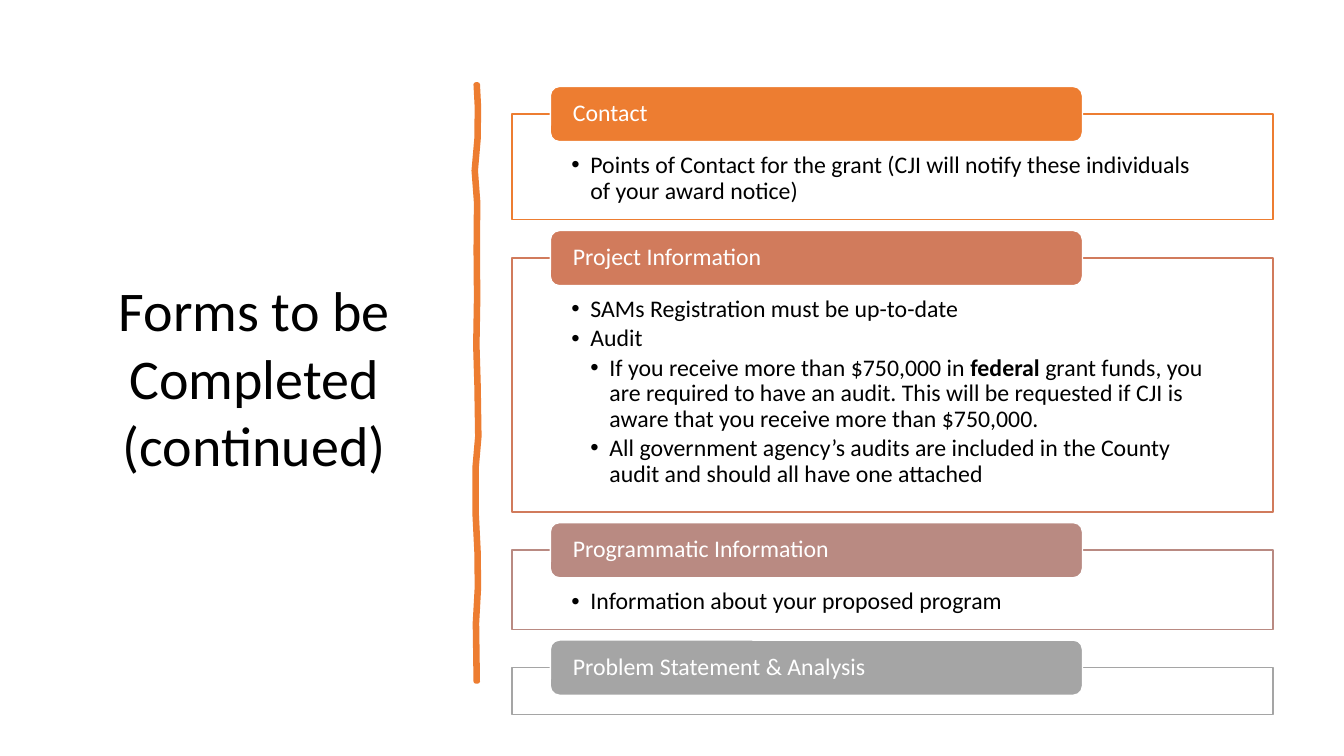
from dataclasses import dataclass

from lxml import etree
from pptx import Presentation
from pptx import util as u
from pptx.dml import color
from pptx.enum import shapes, text
from pptx.oxml import ns


@dataclass(frozen=True)
class Theme:
    font: str = "Calibri"
    title: float = 40
    body: float = 17
    after: float = 2.5
    ink: str = "000000"
    paper: str = "FFFFFF"
    brush: str = "ED7D31"
    tints: tuple = ("ED7D31", "D17B5C", "B98A82", "A5A5A5")


THEME = Theme()
LEFT, WIDTH, TOP, GAP = 12.9, 19.18, 2.87, 0.96
TAB_LEFT, TAB_WIDTH, TAB_HEIGHT, TAB_RISE = 13.87, 13.41, 1.39, 0.69
INDENT = 0.48

CARDS = [
    ("Contact", 2.67, [
        (1, [("Points of Contact for the grant (CJI will notify these "
              "individuals of your award notice)", False)]),
    ]),
    ("Project Information", 6.4, [
        (1, [("SAMs Registration must be up-to-date", False)]),
        (1, [("Audit", False)]),
        (2, [("If you receive more than $750,000 in ", False),
             ("federal", True),
             (" grant funds, you are required to have an audit. This will be "
              "requested if CJI is aware that you receive more than $750,000.",
              False)]),
        (2, [("All government agency’s audits are included in the County "
              "audit and should all have one attached", False)]),
    ]),
    ("Programmatic Information", 2.0, [
        (1, [("Information about your proposed program", False)]),
    ]),
    ("Problem Statement & Analysis", 1.19, []),
]

BRUSH_X = 12.04
BRUSH_THICK = 0.05
BRUSH_EDGE = [
    (2.13, 0), (2.7, 0.03), (3.5, 0.02), (4.3, -0.05), (5.1, 0.01),
    (6.3, 0), (7.5, 0.01), (8.7, -0.01), (9.7, 0.02), (11, 0.04),
    (11.8, -0.03), (12.9, -0.03), (13.9, 0.02), (14.8, 0.03),
    (15.7, -0.02), (17.17, 0),
]


def rgb(code):
    return color.RGBColor.from_string(code)


def paint(shape, fill, line, width):
    shape.shadow.inherit = False
    shape.fill.solid()
    shape.fill.fore_color.rgb = rgb(fill)
    shape.line.color.rgb = rgb(line)
    shape.line.width = u.Pt(width)


def box(slide, kind, area, fill, line):
    shape = slide.shapes.add_shape(kind, *map(u.Cm, area))
    paint(shape, fill, line, 1)
    return shape


def inset(frame, left, top, right, bottom):
    frame.word_wrap = True
    frame.margin_left, frame.margin_top = u.Cm(left), u.Cm(top)
    frame.margin_right, frame.margin_bottom = u.Cm(right), u.Cm(bottom)


def add_run(para, words, size, ink, bold=False):
    run = para.add_run()
    run.text = words
    run.font.name = THEME.font
    run.font.size = u.Pt(size)
    run.font.bold = bold
    run.font.color.rgb = rgb(ink)


def bullet(para, level):
    para.level = level
    props = para._p.get_or_add_pPr()
    props.set("marL", str(u.Cm(INDENT * level)))
    props.set("indent", str(-u.Cm(INDENT)))
    etree.SubElement(props, ns.qn("a:buFont")).set("typeface", "Arial")
    etree.SubElement(props, ns.qn("a:buChar")).set("char", "•")


def add_body(frame, items):
    frame.vertical_anchor = text.MSO_ANCHOR.TOP
    inset(frame, 1.5, 0.99, 1.5, 0.33)
    for i, (level, runs) in enumerate(items):
        para = frame.paragraphs[0] if i == 0 else frame.add_paragraph()
        para.alignment = text.PP_ALIGN.LEFT
        para.line_spacing = 0.9
        para.space_after = u.Pt(THEME.after)
        bullet(para, level)
        for words, bold in runs:
            add_run(para, words, THEME.body, THEME.ink, bold)


def add_tab(slide, label, top, tint):
    area = (TAB_LEFT, top - TAB_RISE, TAB_WIDTH, TAB_HEIGHT)
    tab = box(slide, shapes.MSO_SHAPE.ROUNDED_RECTANGLE, area, tint,
              THEME.paper)
    frame = tab.text_frame
    frame.vertical_anchor = text.MSO_ANCHOR.MIDDLE
    inset(frame, 0.5, 0, 0.5, 0)
    para = frame.paragraphs[0]
    para.alignment = text.PP_ALIGN.LEFT
    para.line_spacing = 0.9
    add_run(para, label, THEME.body, THEME.paper)


def add_cards(slide):
    top = TOP
    for (label, height, items), tint in zip(CARDS, THEME.tints):
        card = box(slide, shapes.MSO_SHAPE.RECTANGLE,
                   (LEFT, top, WIDTH, height), THEME.paper, tint)
        add_body(card.text_frame, items)
        add_tab(slide, label, top, tint)
        top += height + GAP


def add_brush(slide):
    right = [(u.Cm(BRUSH_X + dx), u.Cm(y)) for y, dx in BRUSH_EDGE]
    left = [(x - u.Cm(BRUSH_THICK), y) for x, y in reversed(right)]
    pen = slide.shapes.build_freeform(*right[0])
    pen.add_line_segments(right[1:] + left, close=True)
    paint(pen.convert_to_shape(), THEME.brush, THEME.brush, 3.25)


def add_title(slide, words):
    area = (1.68, 6.83, 9.45, 5.38)
    frame = slide.shapes.add_textbox(*map(u.Cm, area)).text_frame
    frame.word_wrap = True
    frame.auto_size = text.MSO_AUTO_SIZE.SHAPE_TO_FIT_TEXT
    para = frame.paragraphs[0]
    para.alignment = text.PP_ALIGN.CENTER
    add_run(para, words, THEME.title, THEME.ink)


def main():
    deck = Presentation()
    deck.slide_width, deck.slide_height = u.Cm(33.87), u.Cm(19.05)
    slide = deck.slides.add_slide(deck.slide_layouts[6])
    add_brush(slide)
    add_cards(slide)
    add_title(slide, "Forms to be Completed (continued)")
    deck.save("out.pptx")


if __name__ == "__main__":
    main()
